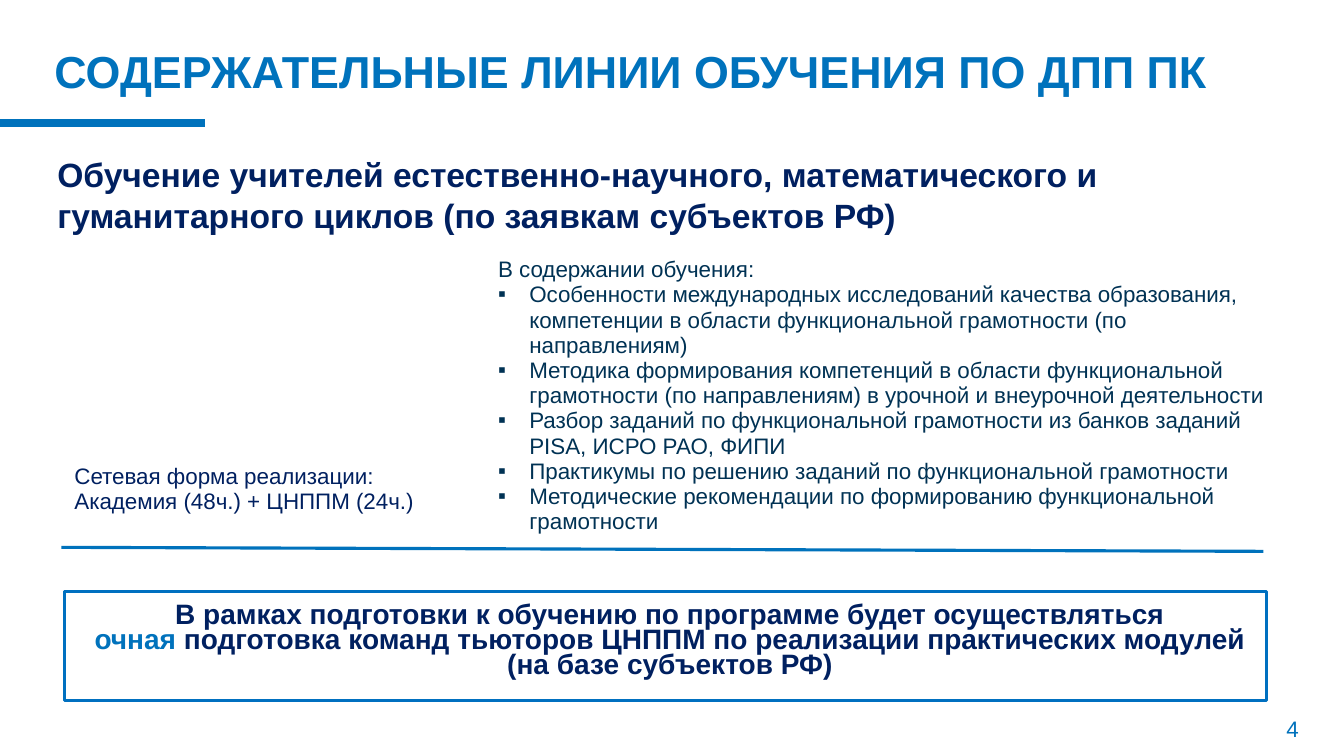
from lxml.etree import SubElement
from pptx import Presentation
from pptx.dml.color import RGBColor
from pptx.enum.shapes import MSO_CONNECTOR as CONN, MSO_SHAPE as SHAPE
from pptx.enum.text import MSO_ANCHOR as ANCHOR, MSO_AUTO_SIZE as AUTO, PP_ALIGN as ALIGN
from pptx.oxml.ns import qn
from pptx.util import Pt

PX = 9144  # 100 px to the inch
FONT = "Arial"
COLORS = {"blue": "0072BC", "frame": "0070C0", "navy": "002060", "teal": "003254"}

TITLE = "СОДЕРЖАТЕЛЬНЫЕ ЛИНИИ ОБУЧЕНИЯ ПО ДПП ПК"
SUBTITLE = ("Обучение учителей естественно-научного, математического и "
            "гуманитарного циклов (по заявкам субъектов РФ)")
TOPICS_LEAD = "В содержании обучения:"
TOPICS = [
    "Особенности международных исследований качества образования, "
    "компетенции в области функциональной грамотности (по направлениям)",
    "Методика формирования компетенций в области функциональной "
    "грамотности (по направлениям) в урочной и внеурочной деятельности",
    "Разбор заданий по функциональной грамотности из банков заданий PISA, ИСРО РАО, ФИПИ",
    "Практикумы по решению заданий по функциональной грамотности",
    "Методические рекомендации по формированию функциональной грамотности",
]
NETWORK = ["Сетевая форма реализации:", "Академия (48ч.) + ЦНППМ (24ч.)"]
SUMMARY = "В рамках подготовки к обучению по программе будет осуществляться"
SUMMARY_KEY = "очная"
SUMMARY_REST = (" подготовка команд тьюторов ЦНППМ по реализации "
                "практических модулей (на базе субъектов РФ)")


def rgb(name):
    return RGBColor.from_string(COLORS[name])


def place(sp, box):
    sp.left, sp.top, sp.width, sp.height = (v * PX for v in box)


def setup_frame(tf, inset_y=5, anchor=ANCHOR.TOP):
    tf.word_wrap = True
    tf.auto_size = AUTO.NONE
    tf.vertical_anchor = anchor
    tf.margin_left = tf.margin_right = 10 * PX
    tf.margin_top = tf.margin_bottom = inset_y * PX


def add_text(slide, box, text, **frame):
    s = slide.shapes.add_textbox(*(v * PX for v in box))
    setup_frame(s.text_frame, **frame)
    s.text_frame.text = text
    return s.text_frame


def style(tf, size, color, bold=False, align=ALIGN.LEFT, spacing=None):
    for p in tf.paragraphs:
        p.alignment = align
        p.space_before = Pt(0)
        if spacing:
            p.line_spacing = Pt(spacing)
        for r in p.runs:
            r.font.name, r.font.size, r.font.bold = FONT, Pt(size), bold
            r.font.color.rgb = rgb(color)


def set_bullet(p, char=None, indent=0):
    pPr = p._p.get_or_add_pPr()
    pPr.set("marL", str(indent * PX))
    pPr.set("indent", str(-indent * PX))
    if char:
        SubElement(pPr, qn("a:buChar")).set("char", char)
    else:
        SubElement(pPr, qn("a:buNone"))


def add_line(slide, ends, width):
    line = slide.shapes.add_connector(CONN.STRAIGHT, *(v * PX for v in ends))
    line.line.color.rgb = rgb("blue")
    line.line.width = Pt(width)
    SubElement(line._element.spPr, qn("a:effectLst"))


def add_header(slide, box):
    x, y, w, h = box
    title = slide.shapes.title
    place(title, box)
    setup_frame(title.text_frame, anchor=ANCHOR.MIDDLE)
    title.text_frame.text = TITLE
    style(title.text_frame, 32, "blue", bold=True)
    # Accent bar from the slide edge
    add_line(slide, (0, y + 77, 203, y + 77), 6)
    # Subtitle
    tf = add_text(slide, (x + 3, y + 98, w - 32, 94), SUBTITLE, inset_y=10)
    style(tf, 24, "navy", bold=True)


def add_topics(slide, box):
    body = slide.placeholders[1]
    place(body, box)
    tf = body.text_frame
    setup_frame(tf, inset_y=10)
    tf.text = "\n".join([TOPICS_LEAD, *TOPICS])
    style(tf, 16, "teal", spacing=18)
    lead, *items = tf.paragraphs
    set_bullet(lead)
    for p in items:
        set_bullet(p, "▪", 31)


def add_network(slide, box):
    tf = add_text(slide, box, "\n".join(NETWORK), inset_y=10)
    style(tf, 16, "navy", spacing=18)


def add_summary(slide, box):
    x, y, w, h = box
    # Text
    tf = add_text(slide, (x + 9, y + 8, w - 9, h - 22), SUMMARY)
    p = tf.add_paragraph()
    for text in (SUMMARY_KEY, SUMMARY_REST):
        p.add_run().text = text
    style(tf, 20, "navy", bold=True, align=ALIGN.CENTER, spacing=18)
    p.runs[0].font.color.rgb = rgb("blue")
    # Frame
    frame = slide.shapes.add_shape(SHAPE.RECTANGLE, *(v * PX for v in box))
    frame.shadow.inherit = False
    frame.fill.background()
    frame.line.color.rgb = rgb("frame")
    frame.line.width = Pt(2.25)


def add_page_number(slide, box, number):
    tf = add_text(slide, box, str(number), anchor=ANCHOR.MIDDLE)
    style(tf, 16, "blue", align=ALIGN.CENTER)


def main():
    prs = Presentation()
    prs.slide_width, prs.slide_height = 1333 * PX, 750 * PX
    slide = prs.slides.add_slide(prs.slide_layouts[1])
    add_header(slide, (44, 45, 1197, 51))
    add_topics(slide, (484, 245, 797, 295))
    add_network(slide, (64, 450, 384, 37))
    add_line(slide, (61, 543, 1253, 547), 2.25)  # Divider
    add_summary(slide, (64, 587, 1192, 108))
    add_page_number(slide, (1242, 702, 80, 41), 4)
    prs.save("out.pptx")


if __name__ == "__main__":
    main()
